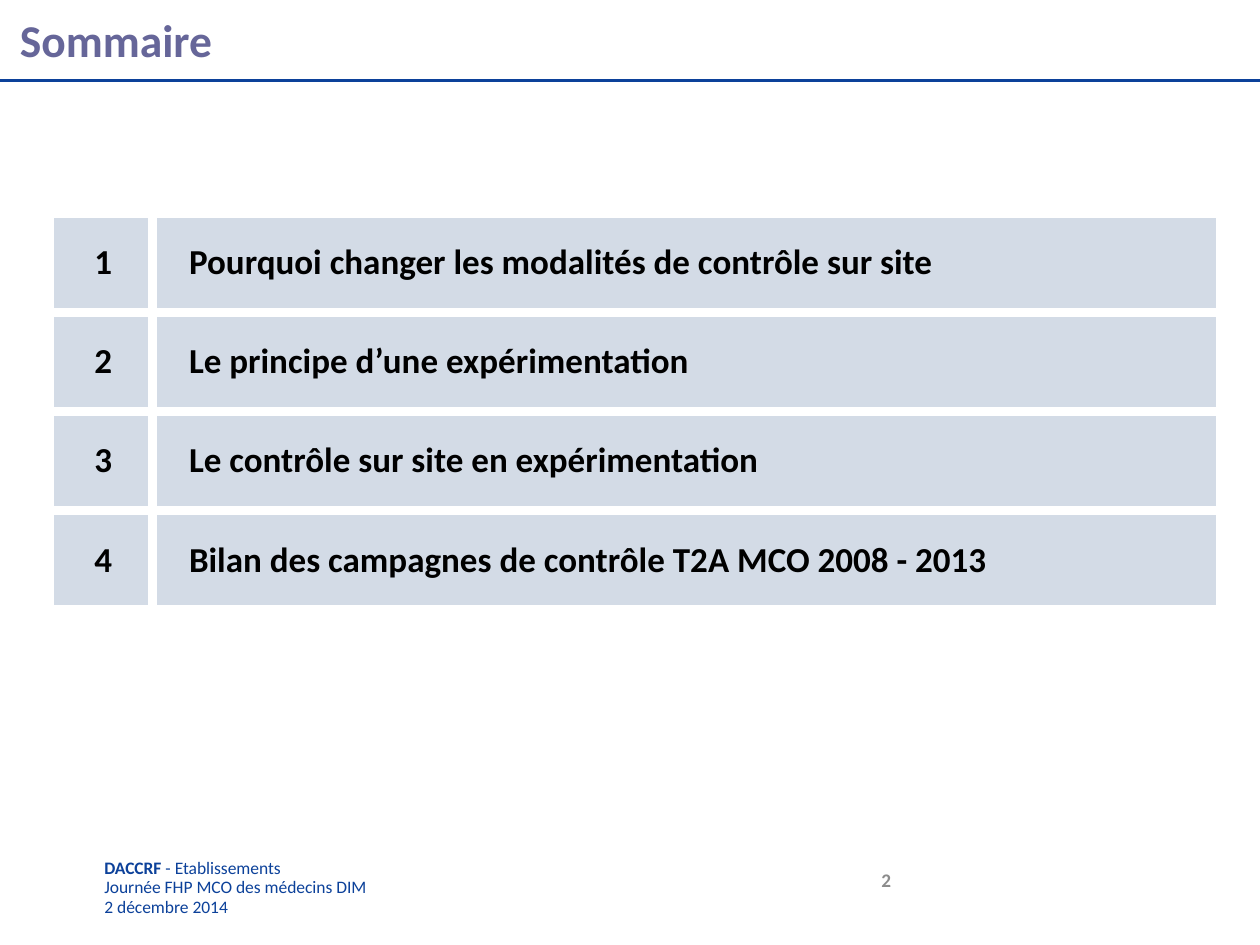
from lxml.etree import SubElement
from pptx import Presentation
from pptx.dml.color import RGBColor
from pptx.enum.shapes import MSO_CONNECTOR
from pptx.enum.text import MSO_ANCHOR as ANCHOR, PP_ALIGN as ALIGN
from pptx.oxml import parse_xml
from pptx.oxml.ns import nsdecls, qn
from pptx.util import Inches, Pt

WHITE = RGBColor(0xFF, 0xFF, 0xFF)
BLACK = RGBColor(0x00, 0x00, 0x00)
BLUE = RGBColor(0x0C, 0x41, 0x9A)
PURPLE = RGBColor(0x66, 0x66, 0x99)
GREY = RGBColor(0x8C, 0x8C, 0x8C)
ROW_FILL = RGBColor(0xA9, 0xB9, 0xCF)

TOPICS = [
    "Pourquoi changer les modalités de contrôle sur site",
    "Le principe d’une expérimentation",
    "Le contrôle sur site en expérimentation",
    "Bilan des campagnes de contrôle T2A MCO 2008 - 2013",
]
FOOTER = [
    [("DACCRF ", True), ("- Etablissements", False)],
    [("Journée FHP MCO des médecins DIM", False)],
    [("2 décembre 2014", False)],
]


def add_run(p, text, size, color, bold=True):
    r = p.add_run()
    r.text = text
    for name, value in dict(name="Calibri", size=Pt(size), bold=bold).items():
        setattr(r.font, name, value)
    r.font.color.rgb = color


def add_box(s, box, anchor):
    tf = s.shapes.add_textbox(*map(Inches, box)).text_frame
    tf.word_wrap = True
    tf.vertical_anchor = anchor
    return tf


def add_header(s, box):
    left, top, width, height = box
    tf = add_box(s, (left + 0.06, top + 0.05, width - 0.18, 0.52), ANCHOR.MIDDLE)
    add_run(tf.paragraphs[0], "Sommaire", 26, PURPLE)
    y = Inches(top + height)
    rule = s.shapes.add_connector(MSO_CONNECTOR.STRAIGHT, Inches(left), y,
                                  Inches(left + width), y)
    rule.line.color.rgb = BLUE
    rule.line.width = Pt(1.5)
    SubElement(rule._element.spPr, qn("a:effectLst"))


def set_borders(cell, white_sides):
    """Draw 6 pt white borders on the given sides and none on the others."""
    tc_pr = cell._tc.get_or_add_tcPr()
    for i, side in enumerate("LRTB"):
        fill = "<a:noFill/>"
        if side in white_sides:
            fill = f'<a:solidFill><a:srgbClr val="{WHITE}"/></a:solidFill>'
        tc_pr.insert(i, parse_xml(
            f'<a:ln{side} {nsdecls("a")} w="{Pt(6)}">{fill}</a:ln{side}>'))


def fill_cell(cell, text, white_sides):
    for side in ("left", "right", "top", "bottom"):
        setattr(cell, f"margin_{side}", Inches(0.1))
    cell.vertical_anchor = ANCHOR.MIDDLE
    cell.fill.solid()
    cell.fill.fore_color.rgb = ROW_FILL
    color = cell._tc.tcPr.find(".//" + qn("a:srgbClr"))
    SubElement(color, qn("a:alpha"), val="50000")
    set_borders(cell, white_sides)
    p = cell.text_frame.paragraphs[0]
    add_run(p, text, 20, BLACK)
    return p


def add_topics(s, box):
    table = s.shapes.add_table(len(TOPICS), 2, *map(Inches, box)).table
    table.first_row = table.horz_banding = False
    number_width = 0.78
    table.columns[0].width = Inches(number_width)
    table.columns[1].width = Inches(box[2] - number_width)
    for i, topic in enumerate(TOPICS):
        p = fill_cell(table.cell(i, 0), str(i + 1), "RTB")
        p.alignment = ALIGN.CENTER
        p = fill_cell(table.cell(i, 1), topic, "LTB")
        p._p.get_or_add_pPr().set("marL", str(Inches(0.19)))


def add_footer(s, box):
    left, top, width, height = box
    tf = add_box(s, (left, top + 0.03, 3.5, 0.54), ANCHOR.TOP)
    for i, runs in enumerate(FOOTER):
        p = tf.add_paragraph() if i else tf.paragraphs[0]
        p.line_spacing = 0.6
        if i:
            p.space_before = Pt(4)
        for text, bold in runs:
            add_run(p, text, 10, BLUE, bold)
    number_width = 2.33
    tf = add_box(s, (left + width - number_width, top, number_width, 0.4),
                 ANCHOR.MIDDLE)
    tf.paragraphs[0].alignment = ALIGN.RIGHT
    add_run(tf.paragraphs[0], "2", 11, GREY)


def main():
    prs = Presentation()
    prs.slide_width, prs.slide_height = Inches(10), Inches(7.5)
    s = prs.slides.add_slide(prs.slide_layouts[6])
    add_header(s, (0, 0, 10, 0.64))
    add_topics(s, (0.43, 1.69, 9.22, 3.15))
    add_footer(s, (0.73, 6.78, 6.44, 0.57))
    prs.save("out.pptx")


if __name__ == "__main__":
    main()
